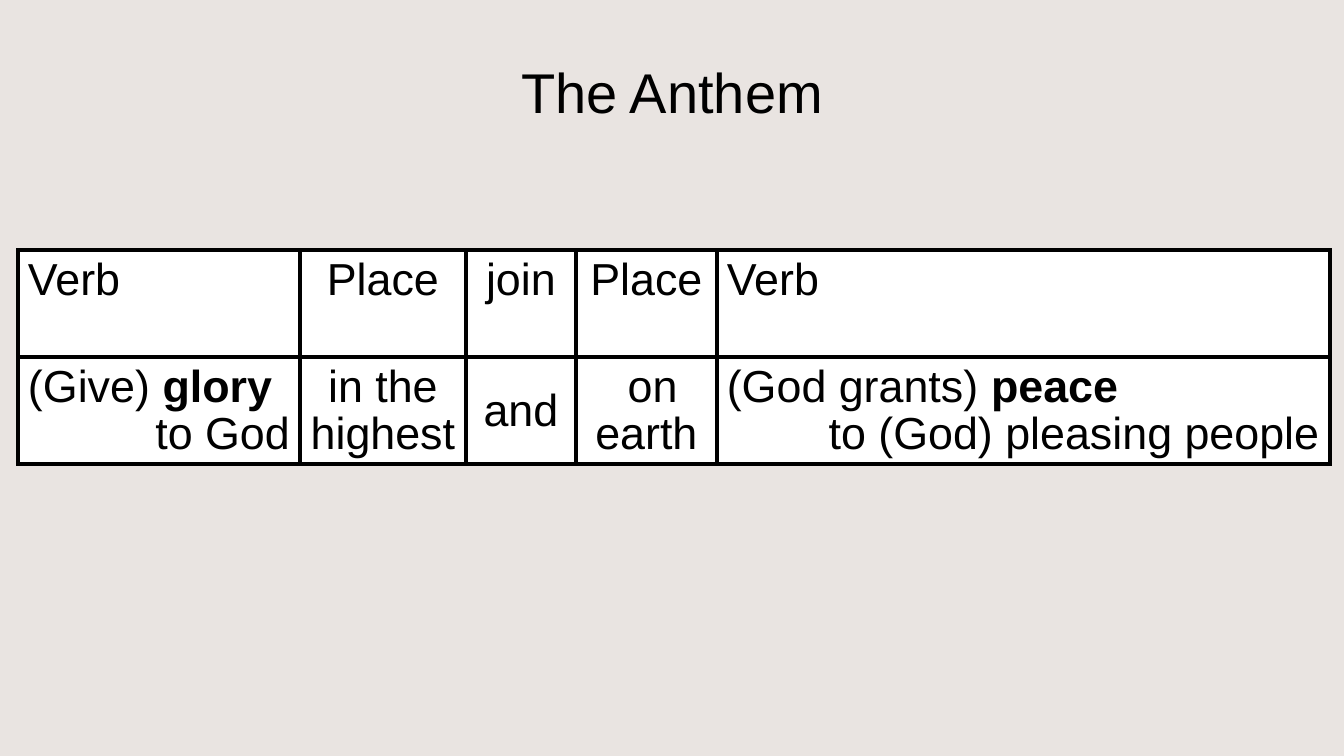
from dataclasses import dataclass

import lxml.etree
import pptx
import pptx.dml.color
import pptx.enum.text
import pptx.oxml.ns
import pptx.slide
import pptx.table
import pptx.text.text
import pptx.util

ALIGN = pptx.enum.text.PP_ALIGN
ANCHOR = pptx.enum.text.MSO_ANCHOR


@dataclass(frozen=True)
class Theme:
    font: str = "Arial"
    title_size: int = 40
    table_size: int = 32
    line_spacing: float = 0.93
    border_width: float = 2.83
    background: str = "E9E4E1"
    cell: str = "FFFFFF"
    ink: str = "000000"


@dataclass(frozen=True)
class Run:
    text: str
    bold: bool = False


@dataclass(frozen=True)
class Line:
    runs: tuple[Run, ...]
    align: ALIGN = ALIGN.CENTER


@dataclass(frozen=True)
class Row:
    anchor: ANCHOR
    cells: tuple[tuple[Line, ...], ...]


THEME = Theme()
COLUMN_WIDTHS = (282, 166, 110, 141, 613)
ROW_HEIGHT = 107


def px(length: int) -> pptx.util.Emu:
    return pptx.util.Emu(round(length * 914400 / 100.8))


def rgb(colour: str) -> pptx.dml.color.RGBColor:
    return pptx.dml.color.RGBColor.from_string(colour)


def left(*runs: Run) -> Line:
    return Line(runs, ALIGN.LEFT)


def centred(text: str) -> Line:
    return Line((Run(text),))


def right(text: str) -> Line:
    return Line((Run(text),), ALIGN.RIGHT)


ROWS = (
    Row(ANCHOR.TOP, (
        (left(Run("Verb")),),
        (centred("Place"),),
        (centred("join"),),
        (centred("Place"),),
        (left(Run("Verb")),),
    )),
    Row(ANCHOR.MIDDLE, (
        (left(Run("(Give) "), Run("glory", True)), right("to God")),
        (centred("in the highest"),),
        (centred("and"),),
        (centred(" on earth"),),
        (left(Run("(God grants) "), Run("peace", True)), right("to (God) pleasing people")),
    )),
)


def write_lines(frame: pptx.text.text.TextFrame, lines: tuple[Line, ...], size: int) -> None:
    for index, line in enumerate(lines):
        paragraph = frame.add_paragraph() if index else frame.paragraphs[0]
        paragraph.alignment = line.align
        paragraph.line_spacing = THEME.line_spacing
        for part in line.runs:
            run = paragraph.add_run()
            run.text = part.text
            run.font.name = THEME.font
            run.font.size = pptx.util.Pt(size)
            run.font.bold = part.bold
            run.font.color.rgb = rgb(THEME.ink)


def add_borders(cell: pptx.table._Cell) -> None:
    properties = cell._tc.get_or_add_tcPr()
    for side in ("L", "R", "T", "B"):
        border = lxml.etree.SubElement(properties, pptx.oxml.ns.qn(f"a:ln{side}"))
        border.set("w", str(pptx.util.Pt(THEME.border_width)))
        fill = lxml.etree.SubElement(border, pptx.oxml.ns.qn("a:solidFill"))
        lxml.etree.SubElement(fill, pptx.oxml.ns.qn("a:srgbClr")).set("val", THEME.ink)


def add_title(slide: pptx.slide.Slide, text: str) -> None:
    title = slide.shapes.title
    title.left, title.top, title.width, title.height = px(67), px(30), px(1210), px(126)
    frame = title.text_frame
    frame.auto_size = pptx.enum.text.MSO_AUTO_SIZE.NONE
    frame.vertical_anchor = ANCHOR.MIDDLE
    frame.margin_left = frame.margin_right = frame.margin_bottom = 0
    frame.margin_top = px(4)
    write_lines(frame, (centred(text),), THEME.title_size)


def add_anthem_table(slide: pptx.slide.Slide) -> None:
    table = slide.shapes.add_table(
        len(ROWS), len(COLUMN_WIDTHS), px(18), px(250),
        px(sum(COLUMN_WIDTHS)), px(ROW_HEIGHT * len(ROWS)),
    ).table
    table.first_row = table.horz_banding = False
    for column, width in zip(table.columns, COLUMN_WIDTHS):
        column.width = px(width)
    for row_index, row in enumerate(ROWS):
        table.rows[row_index].height = px(ROW_HEIGHT)
        for column_index, lines in enumerate(row.cells):
            cell = table.cell(row_index, column_index)
            cell.vertical_anchor = row.anchor
            cell.margin_left = cell.margin_right = px(10)
            cell.margin_top, cell.margin_bottom = px(8), px(5)
            # Borders come before the fill in the cell properties
            add_borders(cell)
            cell.fill.solid()
            cell.fill.fore_color.rgb = rgb(THEME.cell)
            write_lines(cell.text_frame, lines, THEME.table_size)


def main() -> None:
    presentation = pptx.Presentation()
    presentation.slide_width, presentation.slide_height = px(1344), px(756)
    # Title-only slide with a plain background
    slide = presentation.slides.add_slide(presentation.slide_layouts[5])
    slide.background.fill.solid()
    slide.background.fill.fore_color.rgb = rgb(THEME.background)
    add_title(slide, "The Anthem")
    add_anthem_table(slide)
    presentation.save("out.pptx")


if __name__ == "__main__":
    main()
